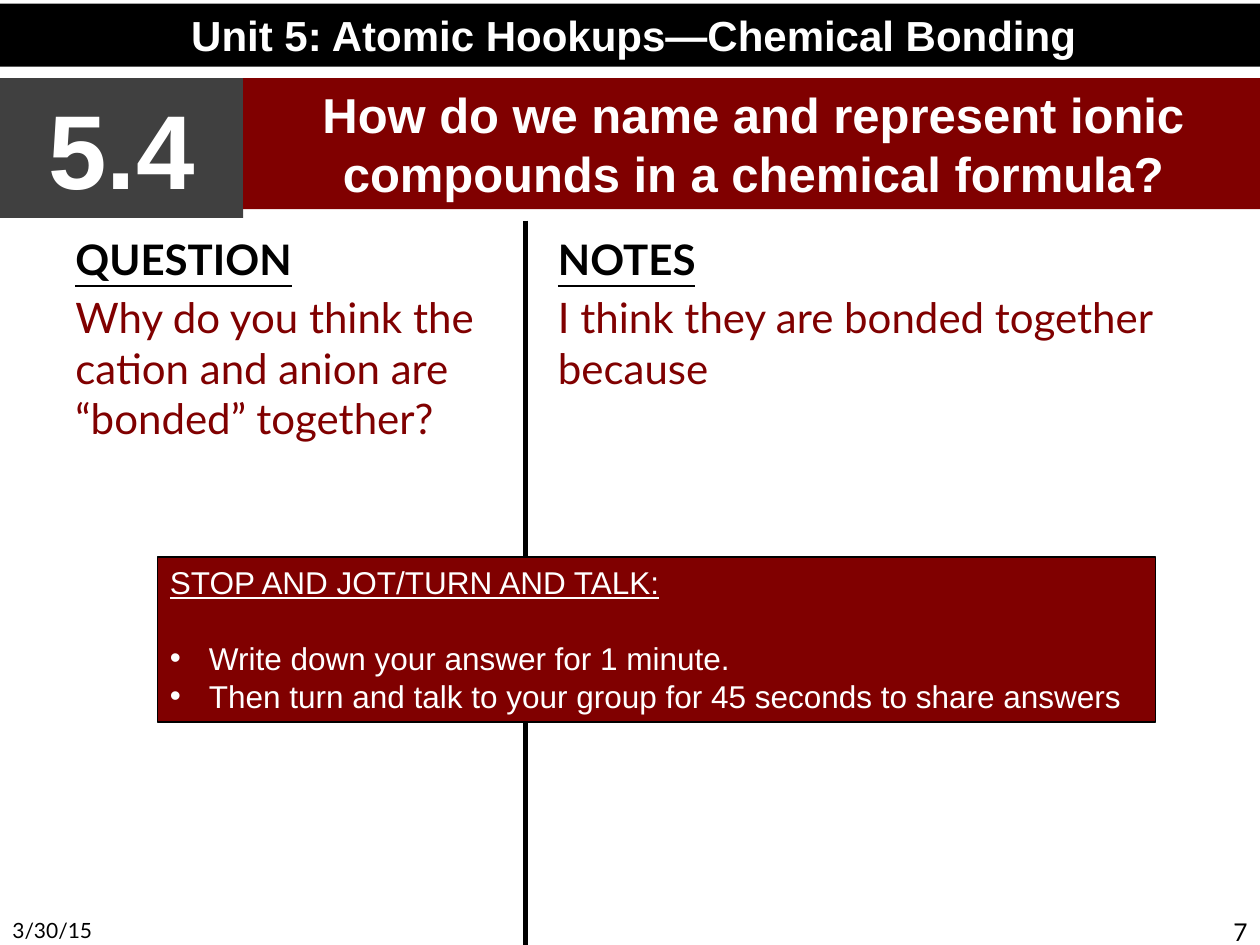
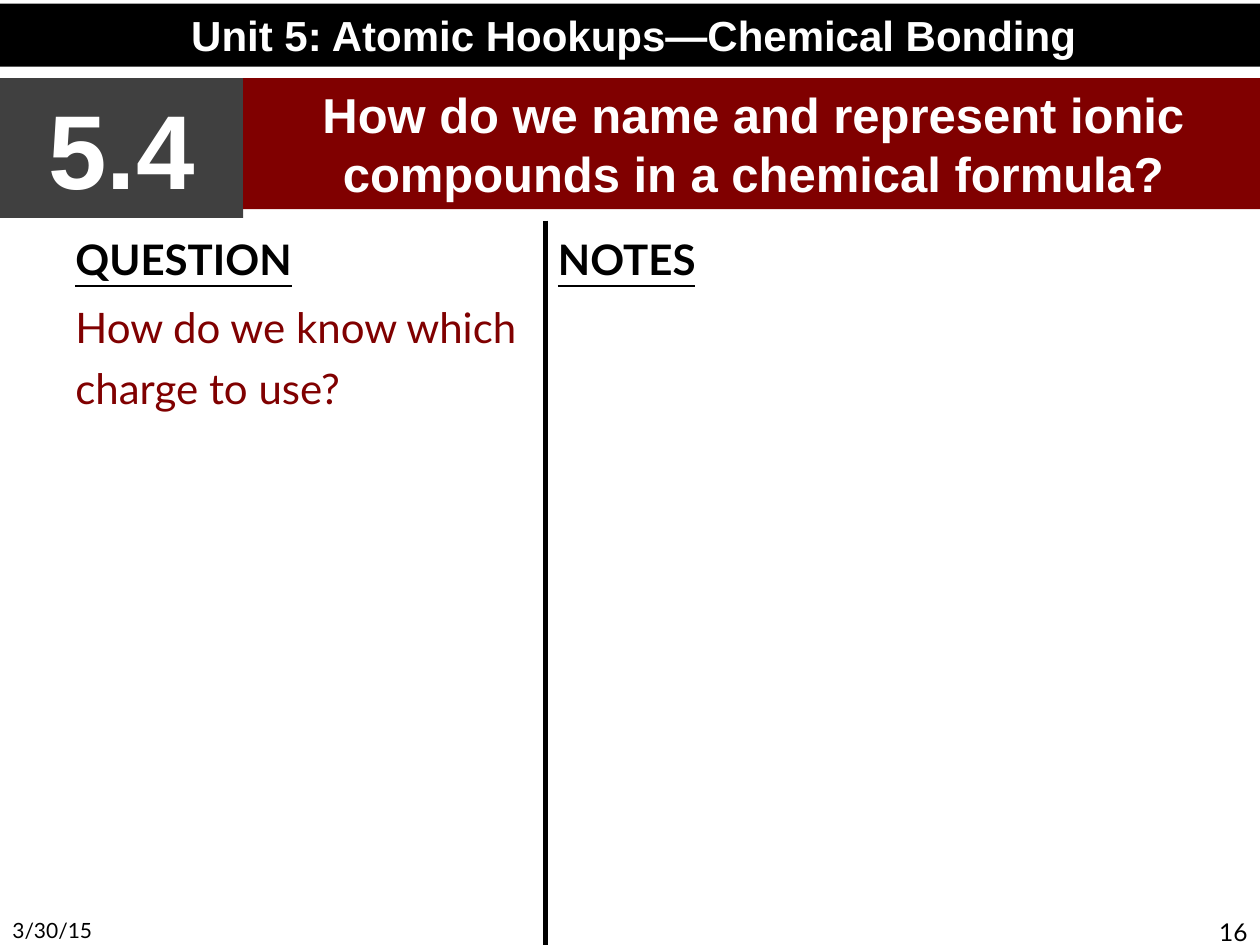
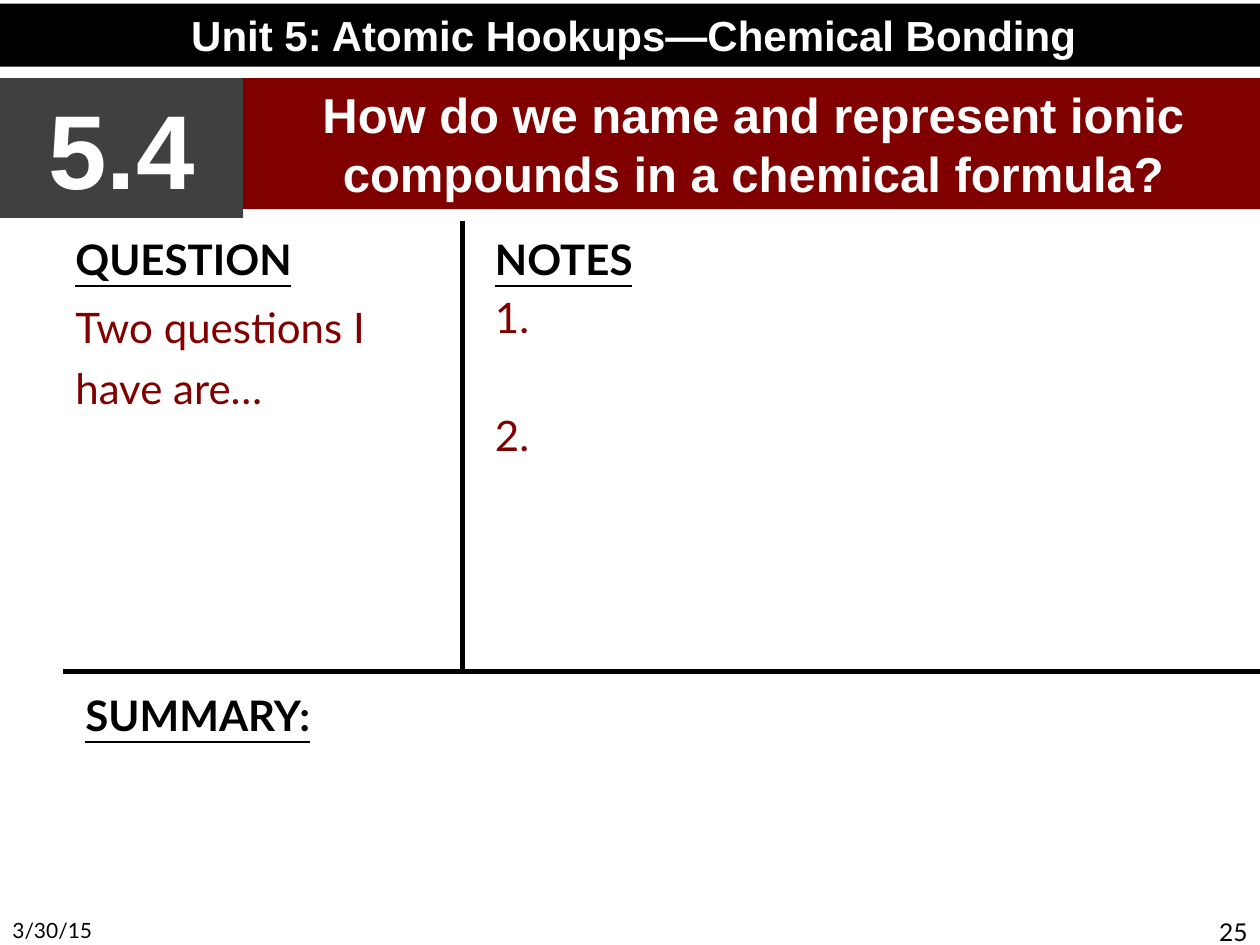
"""Builds three two-column note slides for lesson 5.4 on ionic compounds."""
from lxml.etree import SubElement
from pptx import Presentation
from pptx.dml.color import RGBColor
from pptx.enum.shapes import MSO_CONNECTOR, MSO_SHAPE
from pptx.enum.text import MSO_ANCHOR, PP_ALIGN
from pptx.oxml.ns import qn
from pptx.util import Inches, Pt

BLACK = RGBColor(0x00, 0x00, 0x00)
WHITE = RGBColor(0xFF, 0xFF, 0xFF)
GREY = RGBColor(0x40, 0x40, 0x40)
MAROON = RGBColor(0x80, 0x00, 0x00)
BODY_FONT, BAND_FONT = "Lato", "Arial"
BODY_SIZE, JOT_SIZE = 24, 18
GAP = 0.2 * BODY_SIZE
BLANK_LINE = 1.2 * BODY_SIZE + GAP
TOP, RULE_TOP, SUMMARY_Y = 1.8, 1.75, 5.33

BANDS = [
    (0, 0.03, 10.06, 0.5, BLACK, 24, "Unit 5: Atomic Hookups—Chemical Bonding"),
    (0, 0.62, 1.93, 1.11, GREY, 60, "5.4"),
    (1.93, 0.62, 8.1, 1.04, MAROON, 28,
     "How do we name and represent ionic compounds in a chemical formula?"),
]
JOT_BULLETS = [
    "Write down your answer for 1 minute.",
    "Then turn and talk to your group for 45 seconds to share answers",
]
SLIDES = [
    dict(page="7", rule_x=4.17, rule_end=7.5, notes_x=4.33, question_w=3.92, height=4.95,
         question="Why do you think the cation and anion are “bonded” together?", spacing=1.0,
         notes=[("I think they are bonded together because", GAP)]),
    dict(page="16", rule_x=4.33, rule_end=7.5, notes_x=4.33, question_w=3.92, height=4.95,
         question="How do we know which charge to use?", spacing=1.2, notes=[]),
    dict(page="25", rule_x=3.67, rule_end=SUMMARY_Y, notes_x=3.83, question_w=3.17, height=3.45,
         question="Two questions I have are…", spacing=1.2,
         notes=[("1.", GAP), ("2.", GAP + BLANK_LINE)]),
]


def add_text(tf, text, size, color, font=BODY_FONT, bold=False, underline=False,
             align=PP_ALIGN.LEFT, before=0, spacing=1.0):
    p = tf.paragraphs[0]
    if p.runs:
        p = tf.add_paragraph()
    p.alignment = align
    p.line_spacing = spacing
    p.space_before = Pt(before)
    r = p.add_run()
    r.text = text
    r.font.name = font
    r.font.size = Pt(size)
    r.font.bold = bold
    r.font.underline = underline
    r.font.color.rgb = color
    return p


def add_box(s, x, y, w, h, fill=None):
    pos = [Inches(v) for v in (x, y, w, h)]
    if fill is None:
        sp = s.shapes.add_textbox(*pos)
    else:
        sp = s.shapes.add_shape(MSO_SHAPE.RECTANGLE, *pos)
        sp.shadow.inherit = False
        sp.fill.solid()
        sp.fill.fore_color.rgb = fill
        sp.line.fill.background()
    sp.text_frame.word_wrap = True
    sp.text_frame.vertical_anchor = MSO_ANCHOR.TOP
    return sp


prs = Presentation()
prs.slide_width, prs.slide_height = Inches(10), Inches(7.5)

for number, info in enumerate(SLIDES, 1):
    s = prs.slides.add_slide(prs.slide_layouts[6])

    add_text(add_box(s, 0, 7.23, 2.33, 0.27).text_frame, "3/30/15", 12, BLACK)
    add_text(add_box(s, 7.67, 7.23, 2.33, 0.27).text_frame, info["page"], 14, BLACK,
             align=PP_ALIGN.RIGHT)

    tf = add_box(s, 0.5, TOP, info["question_w"], info["height"]).text_frame
    add_text(tf, "QUESTION", BODY_SIZE, BLACK, bold=True, underline=True)
    add_text(tf, info["question"], BODY_SIZE, MAROON, before=GAP, spacing=info["spacing"])

    for x, y, w, h, fill, size, text in BANDS:
        add_text(add_box(s, x, y, w, h, fill).text_frame, text, size, WHITE, BAND_FONT,
                 bold=True, align=PP_ALIGN.CENTER, spacing=Pt(1.2 * size))

    rules = [(info["rule_x"], RULE_TOP, info["rule_x"], info["rule_end"])]
    if number == 3:
        rules.append((10, SUMMARY_Y, 0.5, SUMMARY_Y))
    for rule in rules:
        line = s.shapes.add_connector(MSO_CONNECTOR.STRAIGHT, *[Inches(v) for v in rule])
        line.line.color.rgb = BLACK
        line.line.width = Pt(3)
        SubElement(line._element.spPr, qn("a:effectLst"))

    notes_x = info["notes_x"]
    tf = add_box(s, notes_x, TOP, 10 - notes_x, info["height"]).text_frame
    add_text(tf, "NOTES", BODY_SIZE, BLACK, bold=True, underline=True)
    for text, before in info["notes"]:
        add_text(tf, text, BODY_SIZE, MAROON, before=before)

    if number == 1:
        jot = add_box(s, 1.25, 4.42, 7.92, 1.31, MAROON)
        jot.line.color.rgb = BLACK
        jot.line.width = Pt(0.75)
        line_height = Pt(1.2 * JOT_SIZE)
        add_text(jot.text_frame, "STOP AND JOT/TURN AND TALK:", JOT_SIZE, WHITE, BAND_FONT,
                 underline=True, spacing=line_height)
        for i, text in enumerate(JOT_BULLETS):
            p = add_text(jot.text_frame, text, JOT_SIZE, WHITE, BAND_FONT,
                         before=0 if i else 1.2 * JOT_SIZE, spacing=line_height)
            pPr = p._p.get_or_add_pPr()
            pPr.set("marL", str(Inches(0.31)))
            pPr.set("indent", str(-Inches(0.31)))
            SubElement(pPr, qn("a:buFont"), typeface=BAND_FONT)
            SubElement(pPr, qn("a:buChar"), char="•")
    elif number == 3:
        add_text(add_box(s, 0.58, 5.42, 9.42, 2.08).text_frame, "SUMMARY:", BODY_SIZE, BLACK,
                 bold=True, underline=True)

prs.save("out.pptx")
